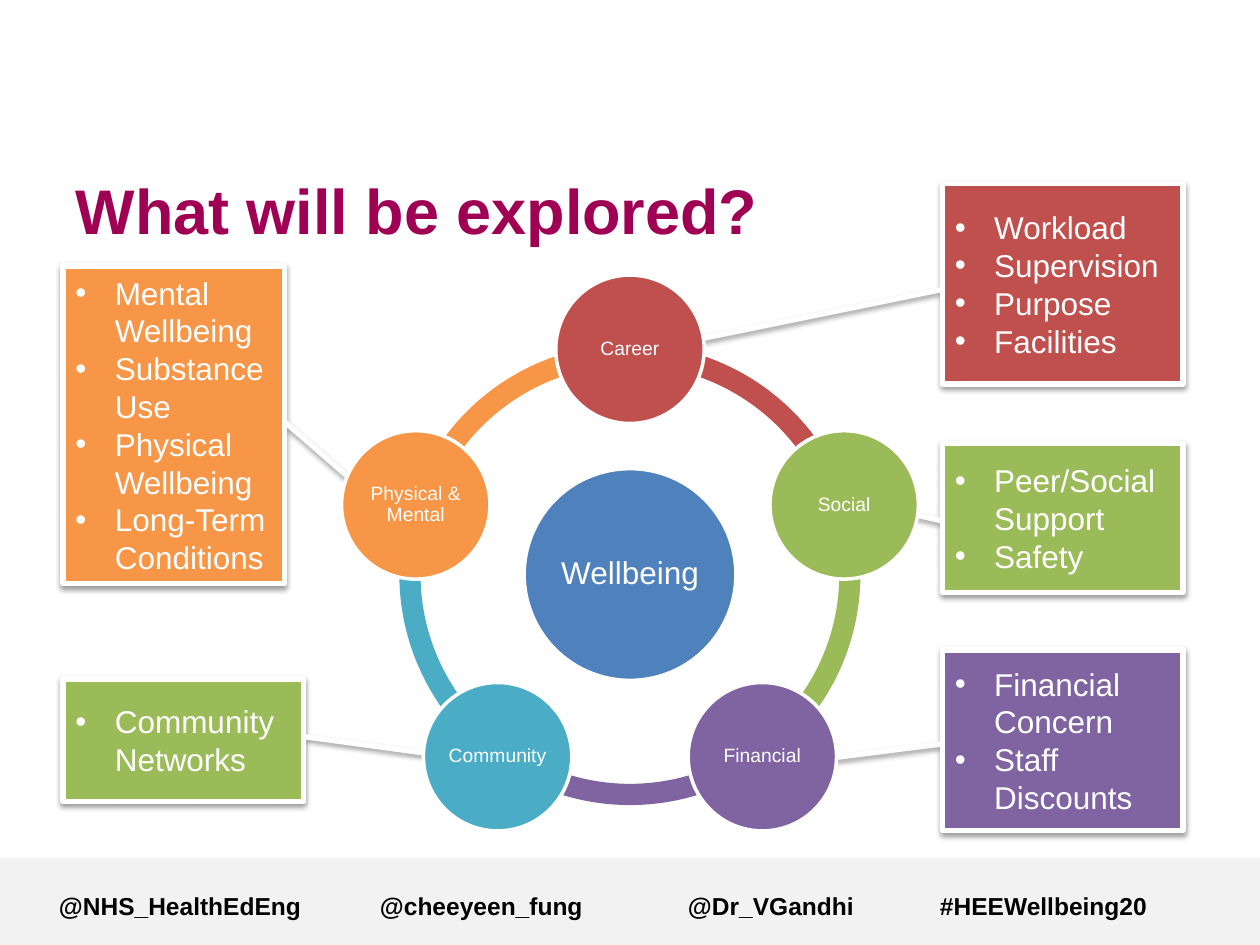
from math import cos, radians, sin

from lxml.etree import SubElement
from pptx import Presentation
from pptx.dml.color import RGBColor as RGB
from pptx.enum.shapes import MSO_SHAPE as Kind
from pptx.enum.text import MSO_ANCHOR as Anchor, MSO_AUTO_SIZE as Fit, PP_ALIGN as Align
from pptx.oxml.ns import qn
from pptx.util import Pt

WHITE = RGB(0xFF, 0xFF, 0xFF)
BLACK = RGB(0, 0, 0)
GREY = RGB(0xF2, 0xF2, 0xF2)
PLUM = RGB(0xA0, 0x00, 0x54)
BLUE = RGB(0x4F, 0x81, 0xBD)
RED = RGB(0xC0, 0x50, 0x4D)
GREEN = RGB(0x9B, 0xBB, 0x59)
PURPLE = RGB(0x80, 0x64, 0xA2)
TEAL = RGB(0x4B, 0xAC, 0xC6)
ORANGE = RGB(0xF7, 0x96, 0x46)

MID_X, MID_Y = 360, 328.3
ORBIT, RING, HUB, NODE = 128.7, 263.5, 121, 84.8
STEP = 72

# Clockwise from the top
NODES = [
    ("Career", RED),
    ("Social", GREEN),
    ("Financial", PURPLE),
    ("Community", TEAL),
    ("Physical & Mental", ORANGE),
]

# Box, callout line (start y, x, end y, x as shares of the box), fill, items
NOTES = [
    ((538.5, 371.5, 137.5, 103), (0.52, 0, 0.6, -0.47), PURPLE,
     ["Financial Concern", "Staff Discounts"]),
    ((538.5, 253.5, 137.5, 85), (0.52, 0, 0.44, -0.22), GREEN,
     ["Peer/Social Support", "Safety"]),
    ((36, 388, 137.5, 70), (0.62, 1.56, 0.47, 1), GREEN,
     ["Community Networks"]),
    ((538.5, 105, 137.5, 114.5), (0.53, -0.01, 0.79, -1.07), RED,
     ["Workload", "Supervision", "Purpose", "Facilities"]),
    ((36, 152, 126.5, 181.5), (0.49, 1, 0.72, 1.38), ORANGE,
     ["Mental Wellbeing", "Substance Use", "Physical Wellbeing", "Long-Term Conditions"]),
]

HANDLES = ["@NHS_HealthEdEng", "@cheeyeen_fung", "@Dr_VGandhi", "#HEEWellbeing20"]
TABS = [183.5, 359.5, 503.5]


def style(para, size, color, bold=False):
    font = para.font
    font.name, font.size, font.bold = "Arial", Pt(size), bold
    font.color.rgb = color


def add_shape(slide, kind, box, fill, line=0):
    """Add a filled shape; line is the width of its white outline, 0 for none."""
    shape = slide.shapes.add_shape(kind, *map(Pt, box))
    shape.shadow.inherit = False
    shape.fill.solid()
    shape.fill.fore_color.rgb = fill
    if line:
        shape.line.color.rgb = WHITE
        shape.line.width = Pt(line)
    else:
        shape.line.fill.background()
    return shape


def add_shadow(shape):
    effects = shape._element.spPr.find(qn("a:effectLst"))
    outer = SubElement(effects, qn("a:outerShdw"), blurRad=str(Pt(3.1)),
                       dist=str(Pt(1.6)), dir="5400000", rotWithShape="0")
    color = SubElement(outer, qn("a:srgbClr"), val="000000")
    SubElement(color, qn("a:alpha"), val="38000")


def add_bullet(para):
    props = para._p.get_or_add_pPr()
    props.set("marL", str(Pt(22.5)))
    props.set("indent", str(-Pt(22.5)))
    SubElement(props, qn("a:buFont"), typeface="Arial")
    SubElement(props, qn("a:buChar"), char="•")


def add_note(slide, box, line, fill, items):
    note = add_shape(slide, Kind.LINE_CALLOUT_1, box, fill, 3)
    for i, share in enumerate(line):
        note.adjustments[i] = share
    add_shadow(note)
    frame = note.text_frame
    frame.word_wrap = True
    frame.vertical_anchor = Anchor.MIDDLE
    for i, item in enumerate(items):
        para = frame.add_paragraph() if i else frame.paragraphs[0]
        para.text = item
        para.alignment = Align.LEFT
        add_bullet(para)
        style(para, 18, WHITE)


def square(x, y, side):
    """Return the box of a square centred on x, y."""
    return x - side / 2, y - side / 2, side, side


def add_disc(slide, x, y, side, fill, text, size):
    disc = add_shape(slide, Kind.OVAL, square(x, y, side), fill, 2)
    frame = disc.text_frame
    frame.word_wrap = True
    frame.vertical_anchor = Anchor.MIDDLE
    frame.margin_left = frame.margin_right = Pt(1.4)
    frame.margin_top = frame.margin_bottom = Pt(1.4)
    para = frame.paragraphs[0]
    para.text = text
    para.alignment = Align.CENTER
    para.line_spacing = 0.9
    style(para, size, WHITE)


def add_arc(slide, start, fill):
    arc = add_shape(slide, Kind.BLOCK_ARC, square(MID_X, MID_Y, RING), fill)
    # An adjustment of 0.6 is one degree
    arc.adjustments[0] = start % 360 * 0.6
    arc.adjustments[1] = (start + STEP) % 360 * 0.6
    arc.adjustments[2] = 0.046


def add_wheel(slide):
    spots = [(270 + i * STEP, text, fill) for i, (text, fill) in enumerate(NODES)]
    for angle, _, fill in reversed(spots):
        add_arc(slide, angle, fill)
    add_disc(slide, MID_X, MID_Y, HUB, BLUE, "Wellbeing", 18)
    for angle, text, fill in spots:
        x = MID_X + ORBIT * cos(radians(angle))
        y = MID_Y + ORBIT * sin(radians(angle))
        add_disc(slide, x, y, NODE, fill, text, 11)


def add_title(slide, text):
    title = slide.shapes.title
    title.left, title.top, title.width, title.height = map(Pt, (36, 93, 612, 53))
    frame = title.text_frame
    frame.auto_size = Fit.NONE
    frame.vertical_anchor = Anchor.MIDDLE
    para = frame.paragraphs[0]
    para.text = text
    para.alignment = Align.LEFT
    style(para, 36, PLUM, True)


def add_footer(slide):
    frame = slide.shapes.add_textbox(*map(Pt, (26.6, 505.5, 681, 34.5))).text_frame
    frame.word_wrap = True
    para = frame.paragraphs[0]
    para.text = "\t".join(HANDLES)
    stops = SubElement(para._p.get_or_add_pPr(), qn("a:tabLst"))
    for stop in TABS:
        SubElement(stops, qn("a:tab"), pos=str(Pt(stop)), algn="l")
    style(para, 14, BLACK, True)


def main():
    deck = Presentation()
    deck.slide_width, deck.slide_height = Pt(720), Pt(540)
    slide = deck.slides.add_slide(deck.slide_layouts[5])
    add_shape(slide, Kind.RECTANGLE, (0, 490, 720, 50), GREY)
    for note in NOTES:
        add_note(slide, *note)
    add_title(slide, "What will be explored?")
    add_wheel(slide)
    add_footer(slide)
    deck.save("out.pptx")


if __name__ == "__main__":
    main()
